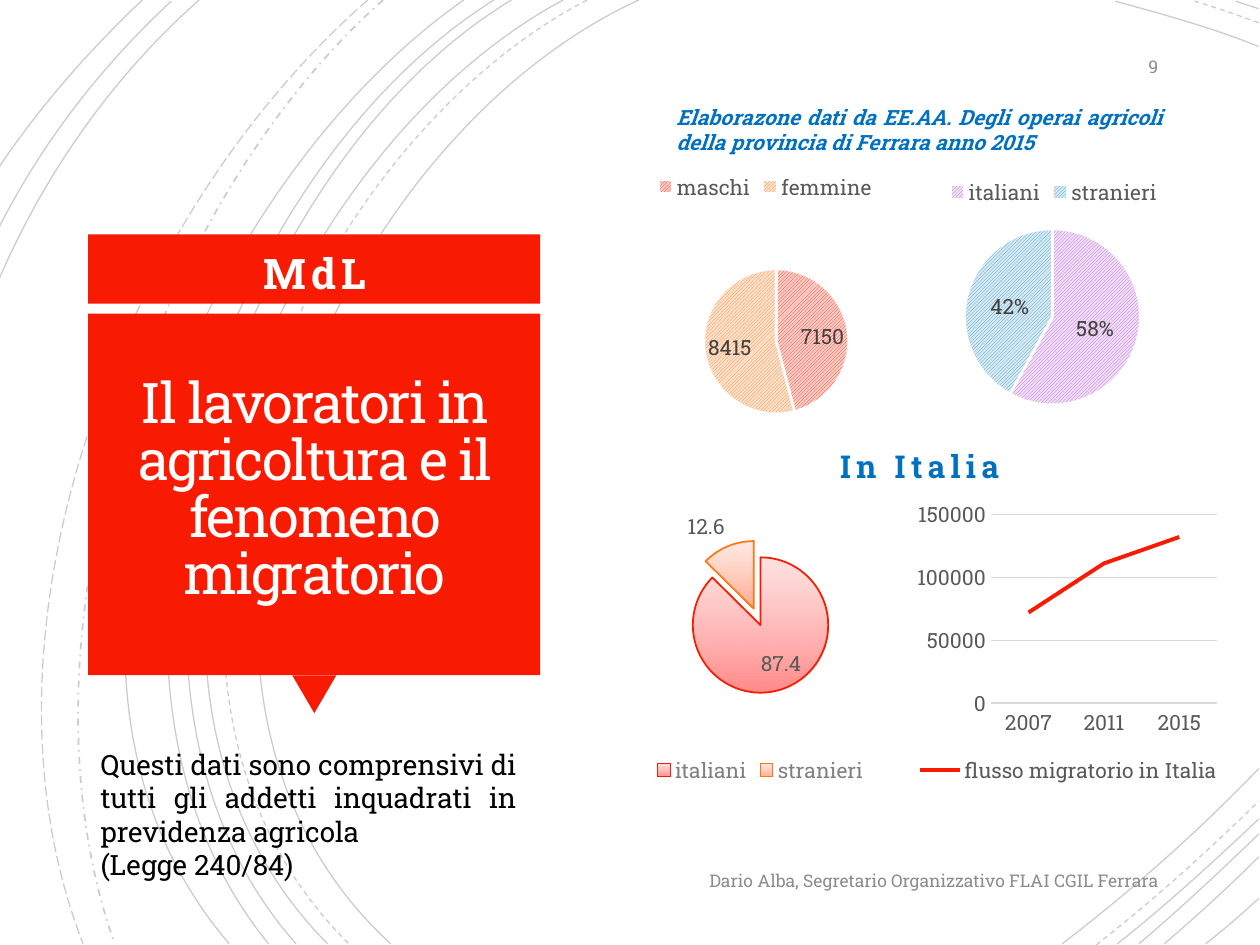
from dataclasses import dataclass

import pptx
import pptx.chart.data
import pptx.dml.color
import pptx.enum.chart
import pptx.enum.dml
import pptx.enum.shapes
import pptx.enum.text
import pptx.oxml.ns
import pptx.oxml.xmlchemy
import pptx.util

Pt = pptx.util.Pt
Align = pptx.enum.text.PP_ALIGN
Anchor = pptx.enum.text.MSO_ANCHOR
Dash = pptx.enum.dml.MSO_LINE
Shape = pptx.enum.shapes.MSO_SHAPE
ChartType = pptx.enum.chart.XL_CHART_TYPE
LegendPosition = pptx.enum.chart.XL_LEGEND_POSITION
LabelPosition = pptx.enum.chart.XL_LABEL_POSITION
qn = pptx.oxml.ns.qn
new_element = pptx.oxml.xmlchemy.OxmlElement


@dataclass(frozen=True)
class Theme:
    font: str = "Roboto Slab"
    red: str = "F81B02"
    orange: str = "FC7715"
    blue: str = "0070C0"
    white: str = "FFFFFF"
    title_text: str = "FFFEFF"
    black: str = "000000"
    label: str = "404040"
    axis: str = "595959"
    legend: str = "808080"
    footer: str = "8C8C8C"
    grid: str = "D9D9D9"
    title_size: int = 32
    banner_size: int = 24
    heading_size: int = 18
    body_size: int = 16
    chart_size: int = 12
    footer_size: int = 10


THEME = Theme()

# Start point, two control points and end point of each background arc.
SOLID_ARCS = [
    (365, 0, 184.3, 82.8, 59.8, 388.8, 223.2, 539.3),
    (719.3, 26.6, 692.6, 15.8, 663.8, 7.9, 637.2, 0.7),
    (607, 539.3, 646.6, 509, 684.7, 475.2, 719.3, 439.2),
    (321.8, 0, 151.9, 91.4, 36, 386.6, 187.2, 539.3),
    (719.3, 5, 715, 3.6, 710.6, 2.2, 706.3, 0.7),
    (638.6, 539.3, 666.7, 517, 693.4, 492.5, 719.3, 468),
    (292.3, 0, 133.2, 95.8, 36, 389.5, 169.2, 539.3),
    (650.9, 539.3, 674.6, 519.1, 697, 498.2, 719.3, 476.6),
    (282.2, 0, 123.8, 99.4, 27.4, 384.5, 153.4, 539.3),
    (665.3, 539.3, 684, 523.4, 702, 506.9, 719.3, 489.6),
    (265, 0, 113.8, 105.8, -5, 380.9, 131, 539.3),
    (689, 539.3, 699.1, 531.4, 709.2, 522.7, 719.3, 513.4),
    (113.8, 0, 63.4, 44.6, 25.2, 100.1, -0.7, 159.8),
    (97.9, 0.7, 56.9, 38.9, 23.8, 82.1, -0.7, 130.3),
    (81.4, 0, 51.1, 28.8, 23, 60.5, -0.7, 95.8),
]
DASHED_ARCS = [
    (335.5, 0, 162.7, 90, 45.4, 387.4, 199.4, 539.3),
    (719.3, 13, 707, 8.6, 694.8, 4.3, 682.6, 0.7),
    (626.4, 540, 658.8, 514.8, 689.8, 486.7, 719.3, 457.9),
]
DASH_DOT_ARCS = [(218.9, 0, 84.2, 119.5, 4.3, 366.5, 65.5, 539.3)]
LONG_DASH_ARCS = [(210.2, 0, 70.6, 121.7, -22.3, 359.3, 47.5, 539.3)]


def rgb(value):
    return pptx.dml.color.RGBColor.from_string(value)


def points(box):
    return [Pt(length) for length in box]


def set_attributes(target, **values):
    for name, value in values.items():
        setattr(target, name, value)


def format_font(font, size, color, **values):
    set_attributes(font, name=THEME.font, size=Pt(size), **values)
    font.color.rgb = rgb(color)


def add_alpha(color_element, percent):
    alpha = new_element("a:alpha")
    alpha.set("val", str(percent * 1000))
    color_element.append(alpha)


def add_arc(slide, arc, dash, width):
    start, *rest = zip(points(arc[::2]), points(arc[1::2]))
    builder = slide.shapes.build_freeform(*start, scale=1)
    shape = builder.add_line_segments(rest, close=False).convert_to_shape()
    lines = shape._element.xpath(".//a:lnTo")
    curve = new_element("a:cubicBezTo")
    lines[0].addprevious(curve)
    for line in lines:
        curve.append(line[0])
        line.getparent().remove(line)
    shape.shadow.inherit = False
    shape.fill.background()
    set_attributes(shape.line, width=Pt(width), dash_style=dash)
    shape.line.color.rgb = rgb(THEME.black)
    add_alpha(shape._element.xpath("./p:spPr/a:ln//a:srgbClr")[0], 20)


def add_background(slide):
    for arcs, dash, width in [
        (SOLID_ARCS, Dash.SOLID, 0.75), (DASHED_ARCS, Dash.DASH, 0.75),
        (DASH_DOT_ARCS, Dash.DASH_DOT, 1), (LONG_DASH_ARCS, Dash.LONG_DASH, 0.75),
    ]:
        for arc in arcs:
            add_arc(slide, arc, dash, width)


def write_text(shape, lines, size, color, align, anchor=Anchor.TOP, spacing=0,
               line_spacing=None, **font_values):
    """Fill a shape with one paragraph per line; spacing is between letters, in points."""
    frame = shape.text_frame
    set_attributes(frame, word_wrap=True, vertical_anchor=anchor,
                   auto_size=pptx.enum.text.MSO_AUTO_SIZE.NONE)
    frame.text = "\n".join(lines)
    for paragraph in frame.paragraphs:
        set_attributes(paragraph, alignment=align, line_spacing=line_spacing)
        run = paragraph.runs[0]
        format_font(run.font, size, color, **font_values)
        if spacing:
            run._r.get_or_add_rPr().set("spc", str(round(spacing * 100)))


def add_text(slide, box, lines, size, color, align, **values):
    write_text(slide.shapes.add_textbox(*points(box)), lines, size, color, align, **values)


def add_title_panel(slide, box):
    left, top, width, height = box
    for kind, part, rotation in [
        (Shape.RECTANGLE, (left, top, width, 39.6), 0),
        (Shape.ISOSCELES_TRIANGLE, (left + 116.6, top + height - 21.6, 25.2, 21.6), 180),
        (Shape.RECTANGLE, (left, top + 45.4, width, height - 67), 0),
    ]:
        shape = slide.shapes.add_shape(kind, *points(part))
        shape.rotation = rotation
        shape.shadow.inherit = False
        shape.fill.solid()
        shape.fill.fore_color.rgb = rgb(THEME.red)
        shape.line.fill.background()
    add_text(slide, (left + 46.8, top + 4.3, 165.6, 36), ["MdL"], THEME.banner_size,
             THEME.white, Align.CENTER, bold=True, spacing=3)
    title = slide.shapes.title
    slide.shapes._spTree.append(title._element)
    title_box = points((left + 6.5, top + 50.4, 245.5, 193.7))
    set_attributes(title, **dict(zip(("left", "top", "width", "height"), title_box)))
    write_text(title, ["Il lavoratori in agricoltura e il fenomeno migratorio"], THEME.title_size,
               THEME.title_text, Align.CENTER, Anchor.MIDDLE, spacing=-1.1, line_spacing=0.85)
    for side in ("left", "top", "right", "bottom"):
        setattr(title.text_frame, f"margin_{side}", Pt(7.2))


def add_chart(slide, box, kind, categories, series_name, values, layout, legend_position, legend_color):
    """Add a one-series chart; layout is the inner plot area in fractions of the box."""
    data = pptx.chart.data.CategoryChartData()
    data.categories = categories
    data.add_series(series_name, values)
    chart = slide.shapes.add_chart(kind, *points(box), data).chart
    format_font(chart.font, THEME.footer_size, THEME.black)
    set_attributes(chart, has_title=False, has_legend=True)
    set_attributes(chart.legend, position=legend_position, include_in_layout=False)
    format_font(chart.legend.font, THEME.chart_size, legend_color)
    plot_area = chart._chartSpace.xpath(".//c:plotArea")[0]
    for old in plot_area.findall(qn("c:layout")):
        plot_area.remove(old)
    layout_element = new_element("c:layout")
    manual = new_element("c:manualLayout")
    layout_element.append(manual)
    plot_area.insert(0, layout_element)
    settings = [("layoutTarget", "inner"), ("xMode", "edge"), ("yMode", "edge"), *zip("xywh", layout)]
    for name, value in settings:
        element = new_element(f"c:{name}")
        element.set("val", str(value))
        manual.append(element)
    return chart


def add_pie(slide, box, categories, values, layout, slices, label_color=THEME.label, percent=False,
            explosion=0, legend_position=LegendPosition.TOP, legend_color=THEME.axis):
    """Add a pie; each slice is (line, colours) and is hatched, or graded when exploded."""
    chart = add_chart(slide, box, ChartType.PIE, categories, "Series 1", values, layout,
                      legend_position, legend_color)
    chart.plots[0].vary_by_categories = True
    series = chart.plots[0].series[0]
    if explosion:
        element = new_element("c:explosion")
        element.set("val", str(explosion))
        series._element.find(qn("c:tx")).addnext(element)
    for index, (line_color, first, second) in enumerate(slices):
        shape_format = series.points[index].format
        fill = shape_format.fill
        if explosion:
            fill.gradient()
            fill.gradient_angle = 270
            for stop, color in zip(fill.gradient_stops, (first, second)):
                stop.color.rgb = rgb(color)
        else:
            fill.patterned()
            fill.pattern = pptx.enum.dml.MSO_PATTERN.LIGHT_UPWARD_DIAGONAL
            fill.fore_color.rgb, fill.back_color.rgb = rgb(first), rgb(second)
        shape_format.line.width = Pt(1 if explosion else 1.5)
        shape_format.line.color.rgb = rgb(line_color)
    for index, color in enumerate(chart._chartSpace.xpath(".//a:gs/a:srgbClr")):
        add_alpha(color, (60, 92)[index % 2])
    labels = series.data_labels
    set_attributes(labels, show_value=not percent, show_percentage=percent,
                   number_format="0%" if percent else "General", number_format_is_linked=False,
                   position=LabelPosition.CENTER if percent else LabelPosition.BEST_FIT)
    format_font(labels.font, THEME.chart_size, label_color)


def add_migration_chart(slide, box):
    chart = add_chart(slide, box, ChartType.LINE, ["2007", "2011", "2015"], "flusso migratorio in Italia",
                      [72000, 111000, 132000], (0.27, 0.07, 0.67, 0.64),
                      LegendPosition.BOTTOM, THEME.axis)
    chart.plots[0].vary_by_categories = False
    series = chart.plots[0].series[0]
    series.smooth = False
    series.marker.style = pptx.enum.chart.XL_MARKER_STYLE.NONE
    tick = pptx.enum.chart.XL_TICK_MARK.NONE
    value_axis, category_axis = chart.value_axis, chart.category_axis
    for axis in (value_axis, category_axis):
        set_attributes(axis, major_tick_mark=tick, minor_tick_mark=tick)
        format_font(axis.tick_labels.font, THEME.chart_size, THEME.axis)
    set_attributes(value_axis, minimum_scale=0, maximum_scale=150000, major_unit=50000,
                   has_major_gridlines=True)
    value_axis.format.line.fill.background()
    for line, color, width in [
        (series.format.line, THEME.red, 2.25), (category_axis.format.line, THEME.grid, 0.75),
        (value_axis.major_gridlines.format.line, THEME.grid, 0.75),
    ]:
        line.width = Pt(width)
        line.color.rgb = rgb(color)


def add_charts(slide):
    origins = ["italiani", "stranieri"]
    add_pie(slide, (349.2, 90.7, 176.4, 157), ["maschi", "femmine"], [7150, 8415], (0.3, 0.4, 0.47, 0.53),
            [(THEME.white, THEME.red, "FFD1CB"), (THEME.white, THEME.orange, "FEE4D0")])
    add_pie(slide, (514.1, 93.6, 176.4, 148.3), origins, [58, 42], (0.21, 0.25, 0.57, 0.68),
            [(THEME.white, "B560D4", "F0DFF6"), (THEME.white, "3B95C4", "D8EAF3")], percent=True)
    add_migration_chart(slide, (514.1, 282.2, 193, 168.5))
    add_pie(slide, (343.4, 281.5, 182.2, 169.2), origins, [87.4, 12.6], (0.25, 0.16, 0.48, 0.52),
            [(THEME.red, "FFCECD", "FF807F"), (THEME.orange, "FFDAD0", "FFA182")],
            label_color=THEME.axis, explosion=13, legend_position=LegendPosition.BOTTOM,
            legend_color=THEME.legend)


def add_captions(slide):
    for box, text in [
        ((50.4, 490.3, 618.5, 25.2), "Dario Alba, Segretario Organizzativo FLAI CGIL Ferrara"),
        ((614.9, 25.2, 54, 25.2), "9"),
    ]:
        add_text(slide, box, [text], THEME.footer_size, THEME.footer, Align.RIGHT, anchor=Anchor.MIDDLE)
    add_text(slide, (379.4, 56.2, 292.3, 51.1),
             ["Elaborazone dati da EE.AA. Degli operai agricoli della provincia di Ferrara anno 2015"],
             THEME.chart_size, THEME.blue, Align.JUSTIFY, bold=True, italic=True)
    add_text(slide, (409.7, 252, 231.8, 28.8), ["In Italia"], THEME.heading_size, THEME.blue,
             Align.CENTER, bold=True, spacing=3)
    add_text(slide, (50.4, 423.4, 252, 85),
             ["Questi dati sono comprensivi di tutti gli addetti inquadrati in previdenza agricola",
              "(Legge 240/84)"], THEME.body_size, THEME.black, Align.JUSTIFY)


def main():
    presentation = pptx.Presentation()
    set_attributes(presentation, slide_width=Pt(720), slide_height=Pt(540))
    slide = presentation.slides.add_slide(presentation.slide_layouts[5])
    add_background(slide)
    add_title_panel(slide, (50.4, 133.9, 258.2, 273.6))
    add_charts(slide)
    add_captions(slide)
    presentation.save("out.pptx")


if __name__ == "__main__":
    main()
